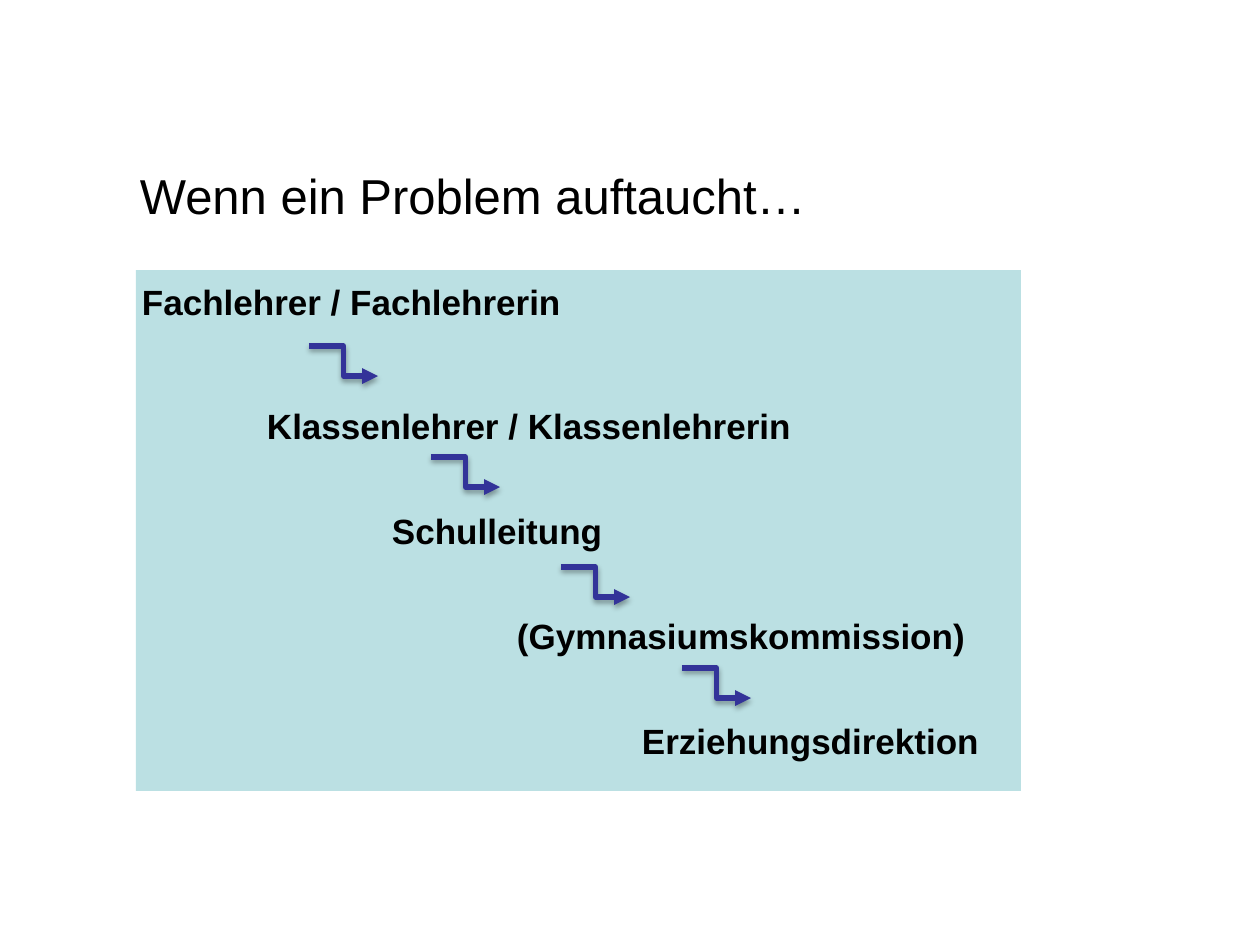
from lxml import etree
from pptx import Presentation
from pptx.dml.color import RGBColor
from pptx.enum.shapes import MSO_CONNECTOR, MSO_SHAPE
from pptx.enum.text import MSO_ANCHOR, PP_ALIGN
from pptx.oxml import parse_xml
from pptx.oxml.ns import nsdecls, qn
from pptx.util import Pt

EMU_PER_PX = 914400 / 126
INDENT = 125
STAGES = [  # text, space before in points
    ("Fachlehrer / Fachlehrerin", 0),
    ("Klassenlehrer / Klassenlehrerin", 47),
    ("Schulleitung", 36),
    ("(Gymnasiumskommission)", 36),
    ("Erziehungsdirektion", 36),
]
ARROW_STARTS = [(309, 346), (431, 457), (561, 567), (682, 668)]
ARROW_WIDTH, ARROW_HEIGHT = 69, 30
SHADOW = f"""<a:effectLst {nsdecls('a')}>
  <a:outerShdw blurRad="38100" dist="22860" dir="5400000" rotWithShape="0">
    <a:srgbClr val="000000"><a:alpha val="35000"/></a:srgbClr>
  </a:outerShdw>
</a:effectLst>"""


def px(n):
    return round(n * EMU_PER_PX)


def color(hex_value):
    return RGBColor.from_string(hex_value)


def set_frame(tf, anchor, top=6):
    tf.word_wrap = True
    tf.vertical_anchor = anchor
    tf.margin_left = tf.margin_right = tf.margin_bottom = px(6)
    tf.margin_top = px(top)


def set_font(p, size, bold=False):
    p.alignment = PP_ALIGN.LEFT
    p.font.name = "Arial"
    p.font.size = Pt(size)
    p.font.bold = bold
    p.font.color.rgb = color("000000")


def add_title(s, text):
    title = s.shapes.title
    title.left, title.top, title.width, title.height = map(px, (134, 154, 1002, 81))
    tf = title.text_frame
    tf.text = text
    set_frame(tf, MSO_ANCHOR.MIDDLE)
    set_font(tf.paragraphs[0], 28)


def add_stages(s):
    """Panel whose lines step to the right, one indent per stage."""
    sp = s.shapes.add_shape(MSO_SHAPE.RECTANGLE, *map(px, (136, 270, 885, 521)))
    sp.shadow.inherit = False
    sp.fill.solid()
    sp.fill.fore_color.rgb = color("BBE0E3")
    sp.line.fill.background()
    tf = sp.text_frame
    set_frame(tf, MSO_ANCHOR.TOP, top=10)
    for i, (text, space) in enumerate(STAGES):
        p = tf.add_paragraph() if i else tf.paragraphs[0]
        p.text = text
        p._p.get_or_add_pPr().set("marL", str(px(i * INDENT)))
        if space:
            p.space_before = Pt(space)
        set_font(p, 20, bold=True)


def add_step_arrow(s, x, y):
    arrow = s.shapes.add_connector(
        MSO_CONNECTOR.ELBOW, px(x), px(y), px(x + ARROW_WIDTH), px(y + ARROW_HEIGHT))
    arrow.line.color.rgb = color("333399")
    arrow.line.width = Pt(3)
    etree.SubElement(arrow.line._get_or_add_ln(), qn("a:tailEnd"), type="triangle")
    arrow._element.spPr.append(parse_xml(SHADOW))


def main():
    prs = Presentation()
    prs.slide_width, prs.slide_height = px(1260), px(945)
    s = prs.slides.add_slide(prs.slide_layouts[5])
    add_title(s, "Wenn ein Problem auftaucht…")
    add_stages(s)
    for x, y in ARROW_STARTS:
        add_step_arrow(s, x, y)
    prs.save("out.pptx")


if __name__ == "__main__":
    main()
